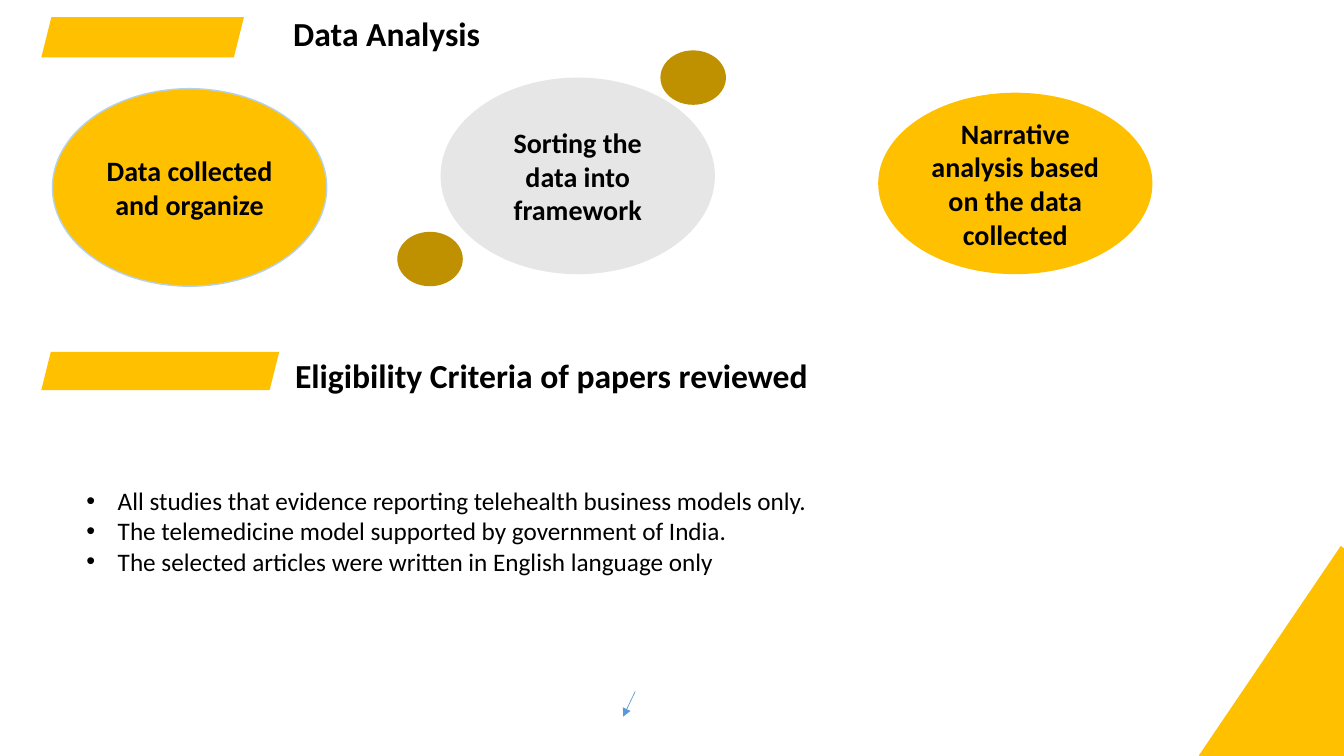
"""Build the data analysis and eligibility criteria slide."""
from dataclasses import dataclass

from lxml.etree import SubElement
from pptx import Presentation
from pptx.dml.color import RGBColor
from pptx.enum.shapes import MSO_CONNECTOR, MSO_SHAPE
from pptx.enum.text import MSO_ANCHOR, PP_ALIGN
from pptx.oxml.ns import qn
from pptx.slide import Slide
from pptx.text.text import TextFrame
from pptx.util import Inches, Pt

FONT = "Calibri"
BLACK = "000000"
GOLD = "FFC000"
DARK_GOLD = "BF9000"
GRAY = "E7E6E6"
PALE_BLUE = "B5D2EC"
BLUE = "5B9BD5"


@dataclass
class Figure:
    kind: MSO_SHAPE
    left: float
    top: float
    width: float
    height: float
    fill: str
    text: str = ""
    outline: str = ""
    rotation: float = 0


@dataclass
class TextBox:
    left: float
    top: float
    width: float
    height: float
    text: str
    size: int
    bold: bool = False
    alignment: PP_ALIGN = PP_ALIGN.LEFT
    bulleted: bool = False


FIGURES = [
    Figure(MSO_SHAPE.OVAL, 0.52, 0.88, 2.72, 1.96, GOLD, "Data collected and organize", PALE_BLUE),
    Figure(MSO_SHAPE.OVAL, 4.37, 0.77, 2.72, 1.95, GRAY, "Sorting the data into framework"),
    Figure(MSO_SHAPE.OVAL, 8.71, 0.92, 2.72, 1.8, GOLD,
           "Narrative analysis based on the data collected"),
    Figure(MSO_SHAPE.OVAL, 6.55, 0.5, 0.65, 0.54, DARK_GOLD),
    Figure(MSO_SHAPE.OVAL, 3.94, 2.3, 0.65, 0.54, DARK_GOLD),
    Figure(MSO_SHAPE.RECTANGLE, 12.49, 5.54, 1.21, 2.51, GOLD, rotation=34.1),
    Figure(MSO_SHAPE.PARALLELOGRAM, 0.41, 0.17, 2.01, 0.4, GOLD),
    Figure(MSO_SHAPE.PARALLELOGRAM, 0.41, 3.49, 2.36, 0.38, GOLD),
]

CRITERIA = "\n".join([
    "All studies that evidence reporting telehealth business models only.",
    "The telemedicine model supported by government of India.",
    "The selected articles were written in English language only",
])

TEXT_BOXES = [
    TextBox(2.81, 0.1, 4, 0.46, "Data Analysis", 24, bold=True),
    TextBox(2.58, 3.48, 5.78, 0.48, "Eligibility Criteria of papers reviewed", 24,
            bold=True, alignment=PP_ALIGN.CENTER),
    TextBox(0.76, 4.21, 10.1, 2.11, CRITERIA, 18, bulleted=True),
]


def color(value: str) -> RGBColor:
    """Turn a hex string into a colour."""
    return RGBColor.from_string(value)


def write_text(frame: TextFrame, text: str, size: int, bold: bool, alignment: PP_ALIGN) -> None:
    """Fill a text frame and format its runs."""
    frame.word_wrap = True
    frame.vertical_anchor = MSO_ANCHOR.MIDDLE
    frame.text = text
    for paragraph in frame.paragraphs:
        paragraph.alignment = alignment
        for run in paragraph.runs:
            run.font.name = FONT
            run.font.size = Pt(size)
            run.font.bold = bold
            run.font.color.rgb = color(BLACK)


def add_bullets(frame: TextFrame) -> None:
    """Give every paragraph a hanging bullet."""
    for paragraph in frame.paragraphs:
        properties = paragraph._p.get_or_add_pPr()
        properties.set("marL", str(Inches(0.31)))
        properties.set("indent", str(Inches(-0.31)))
        SubElement(properties, qn("a:buFont")).set("typeface", "Arial")
        SubElement(properties, qn("a:buChar")).set("char", "•")


def draw_figure(slide: Slide, figure: Figure) -> None:
    """Draw a filled shape with its optional label."""
    shape = slide.shapes.add_shape(figure.kind, Inches(figure.left), Inches(figure.top),
                                   Inches(figure.width), Inches(figure.height))
    shape.shadow.inherit = False
    shape.rotation = figure.rotation
    shape.fill.solid()
    shape.fill.fore_color.rgb = color(figure.fill)
    if figure.outline:
        shape.line.color.rgb = color(figure.outline)
        shape.line.width = Pt(1)
    else:
        shape.line.fill.background()
    if figure.text:
        write_text(shape.text_frame, figure.text, 20, True, PP_ALIGN.CENTER)


def draw_text_box(slide: Slide, box: TextBox) -> None:
    """Draw a heading or a list."""
    shape = slide.shapes.add_textbox(Inches(box.left), Inches(box.top),
                                     Inches(box.width), Inches(box.height))
    write_text(shape.text_frame, box.text, box.size, box.bold, box.alignment)
    if box.bulleted:
        add_bullets(shape.text_frame)


def draw_arrow(slide: Slide) -> None:
    """Draw the small arrow near the bottom edge."""
    arrow = slide.shapes.add_connector(MSO_CONNECTOR.STRAIGHT, Inches(6.3), Inches(6.86),
                                       Inches(6.18), Inches(7.11))
    arrow.line.color.rgb = color(BLUE)
    arrow.line.width = Pt(0.5)
    SubElement(arrow.line._get_or_add_ln(), qn("a:tailEnd")).set("type", "triangle")
    SubElement(arrow._element.spPr, qn("a:effectLst"))


def main() -> None:
    """Build and save the presentation."""
    presentation = Presentation()
    presentation.slide_width = Inches(13.33)
    presentation.slide_height = Inches(7.5)
    slide = presentation.slides.add_slide(presentation.slide_layouts[6])
    draw_arrow(slide)
    for figure in FIGURES:
        draw_figure(slide, figure)
    for box in TEXT_BOXES:
        draw_text_box(slide, box)
    presentation.save("out.pptx")


if __name__ == "__main__":
    main()
